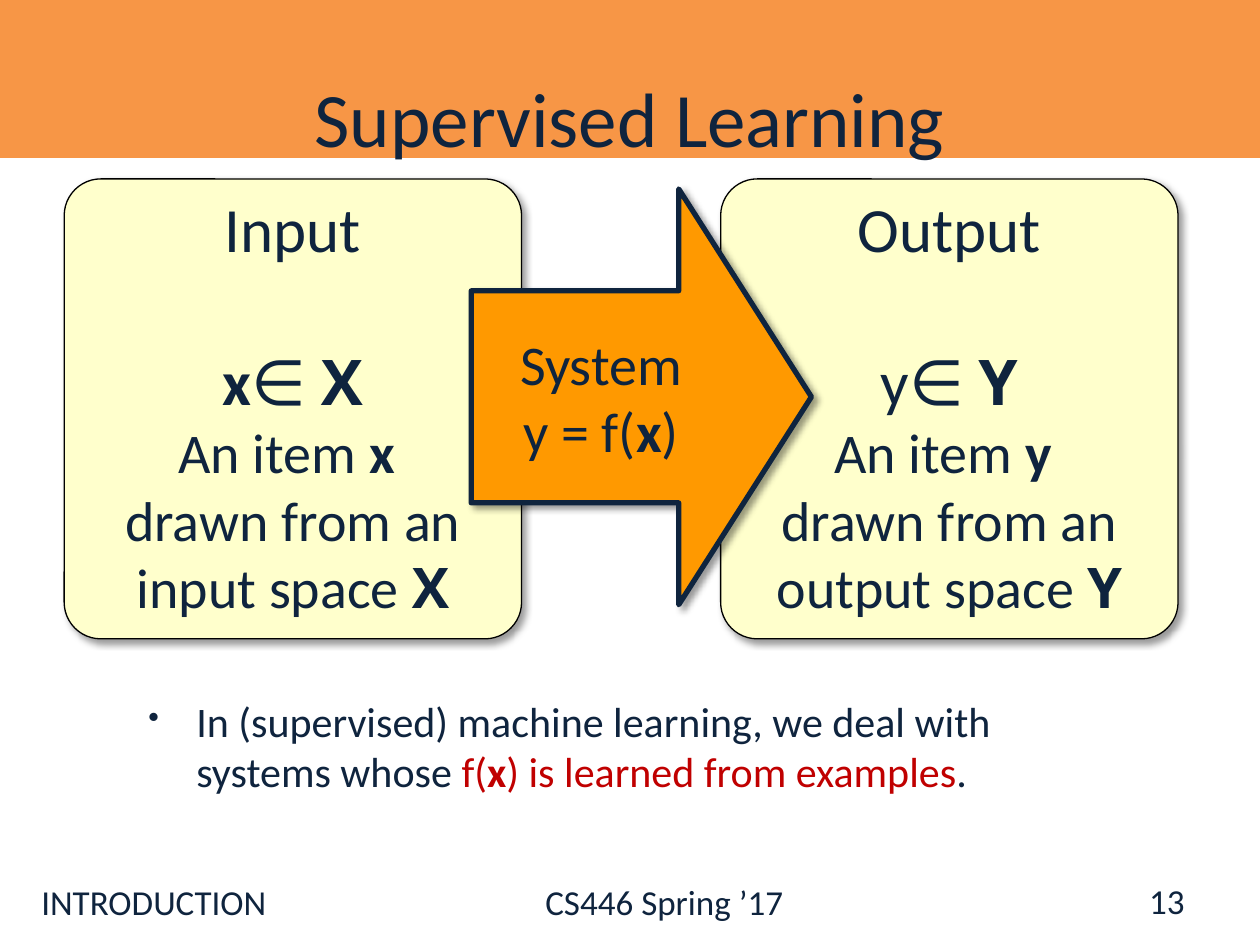
from lxml.etree import SubElement
from pptx import Presentation
from pptx.dml.color import RGBColor
from pptx.enum.shapes import MSO_SHAPE as Shape
from pptx.enum.text import MSO_ANCHOR as Anchor, PP_ALIGN as Align
from pptx.oxml.ns import qn
from pptx.util import Inches, Pt

NAVY = RGBColor(0x0F, 0x24, 0x3E)
RED = RGBColor(0xC0, 0x00, 0x00)
BLACK = RGBColor(0x00, 0x00, 0x00)
BANNER = RGBColor(0xF7, 0x96, 0x46)
CREAM = RGBColor(0xFF, 0xFF, 0xCC)
ORANGE = RGBColor(0xFF, 0x99, 0x00)
BODY_FONT = "Calibri"
SET_FONT = "Open Sans"


class SlideBuilder:
    def __init__(self, slide):
        self.slide = slide

    def shape(self, kind, box, fill, line, width, adjustments=()):
        shape = self.slide.shapes.add_shape(kind, *map(Inches, box))
        shape.shadow.inherit = False
        shape.fill.solid()
        shape.fill.fore_color.rgb = fill
        shape.line.color.rgb = line
        shape.line.width = Pt(width)
        for index, value in enumerate(adjustments):
            shape.adjustments[index] = value
        return shape

    def shadow(self, shape):
        effects = shape._element.spPr.find(qn("a:effectLst"))
        outer = SubElement(effects, qn("a:outerShdw"), blurRad=str(Pt(4)),
                           dist=str(Pt(3)), dir="2700000", algn="tl", rotWithShape="0")
        color = SubElement(outer, qn("a:srgbClr"), val="000000")
        SubElement(color, qn("a:alpha"), val="40000")

    def textbox(self, box, anchor=Anchor.TOP):
        frame = self.slide.shapes.add_textbox(*map(Inches, box)).text_frame
        frame.word_wrap = True
        frame.vertical_anchor = anchor
        return frame

    def paragraph(self, frame, size, align=Align.LEFT, first=False):
        paragraph = frame.paragraphs[0] if first else frame.add_paragraph()
        paragraph.alignment = align
        paragraph.font.size = Pt(size)
        return paragraph

    def run(self, paragraph, text, size, bold=False, color=NAVY, font=BODY_FONT):
        run = paragraph.add_run()
        run.text = text
        run.font.size = Pt(size)
        run.font.bold = bold
        run.font.color.rgb = color
        run.font.name = font

    def line(self, box, text, size, align, anchor):
        paragraph = self.paragraph(self.textbox(box, anchor), size, align, first=True)
        self.run(paragraph, text, size)

    def space_card(self, left, heading, item, item_bold, space, description):
        card = self.shape(Shape.ROUNDED_RECTANGLE, (left, 1.42, 3.63, 3.65),
                          CREAM, BLACK, 0.75, [0.08])
        self.shadow(card)
        frame = card.text_frame
        frame.word_wrap = True
        frame.vertical_anchor = Anchor.TOP
        frame.margin_left = frame.margin_top = frame.margin_right = 0
        frame.margin_bottom = Inches(0.05)

        title = self.paragraph(frame, 36, Align.CENTER, first=True)
        self.run(title, heading, 36)

        membership = self.paragraph(frame, 36, Align.CENTER)
        membership.space_before = Pt(44)
        self.run(membership, item, 36, item_bold)
        self.run(membership, "∈ ", 36)
        self.run(membership, space, 36, True, font=SET_FONT)

        meaning = self.paragraph(frame, 32, Align.CENTER)
        self.run(meaning, "An item ", 32)
        self.run(meaning, item + " ", 32, True)
        meaning.add_line_break()
        self.run(meaning, description, 32)
        self.run(meaning, space, 32, True, font=SET_FONT)

    def system_arrow(self):
        arrow = self.shape(Shape.RIGHT_ARROW, (3.74, 1.5, 2.7, 3.3),
                           ORANGE, NAVY, 3, [0.51, 0.39])
        self.shadow(arrow)
        frame = arrow.text_frame
        frame.word_wrap = True
        frame.vertical_anchor = Anchor.MIDDLE
        name = self.paragraph(frame, 32, Align.CENTER, first=True)
        self.run(name, "System ", 32)
        formula = self.paragraph(frame, 32, Align.CENTER)
        self.run(formula, "y = f(", 32)
        self.run(formula, "x", 32, True)
        self.run(formula, ") ", 32)

    def bullet(self, box, size, runs):
        paragraph = self.textbox(box).paragraphs[0]
        properties = paragraph._p.get_or_add_pPr()
        properties.set("marL", str(Inches(0.38)))
        properties.set("indent", str(Inches(-0.38)))
        SubElement(properties, qn("a:buSzPct"), val="75000")
        SubElement(properties, qn("a:buChar"), char="•")
        paragraph.font.size = Pt(size)
        for text, bold, color in runs:
            self.run(paragraph, text, size, bold, color)

    def footer(self, box, text, tab):
        paragraph = self.textbox(box).paragraphs[0]
        tabs = SubElement(paragraph._p.get_or_add_pPr(), qn("a:tabLst"))
        SubElement(tabs, qn("a:tab"), pos=str(Inches(tab)), algn="l")
        self.run(paragraph, text, 20)


def main():
    presentation = Presentation()
    presentation.slide_width = Inches(10)
    presentation.slide_height = Inches(7.5)
    builder = SlideBuilder(presentation.slides.add_slide(presentation.slide_layouts[6]))

    builder.footer((0.23, 6.94, 9.6, 0.56), "INTRODUCTION\tCS446 Spring ’17", 4)
    builder.shape(Shape.RECTANGLE, (0, 0, 10, 1.25), BANNER, BANNER, 0.75)
    builder.space_card(5.72, "Output", "y", False, "Y", "drawn from an output space ")
    builder.space_card(0.51, "Input", "x", True, "X", "drawn from an input space ")
    builder.system_arrow()
    builder.line((0.5, 0.3, 9, 1.25), "Supervised Learning", 44, Align.CENTER, Anchor.MIDDLE)
    builder.bullet((1.08, 5.47, 7.83, 1.45), 24, [
        ("In (supervised) machine learning, we deal with systems whose ", False, NAVY),
        ("f(", False, RED),
        ("x", True, RED),
        (") is learned from examples", False, RED),
        (".", False, NAVY),
    ])
    builder.line((7.17, 6.95, 2.33, 0.4), "13", 20, Align.RIGHT, Anchor.MIDDLE)

    presentation.save("out.pptx")


if __name__ == "__main__":
    main()
